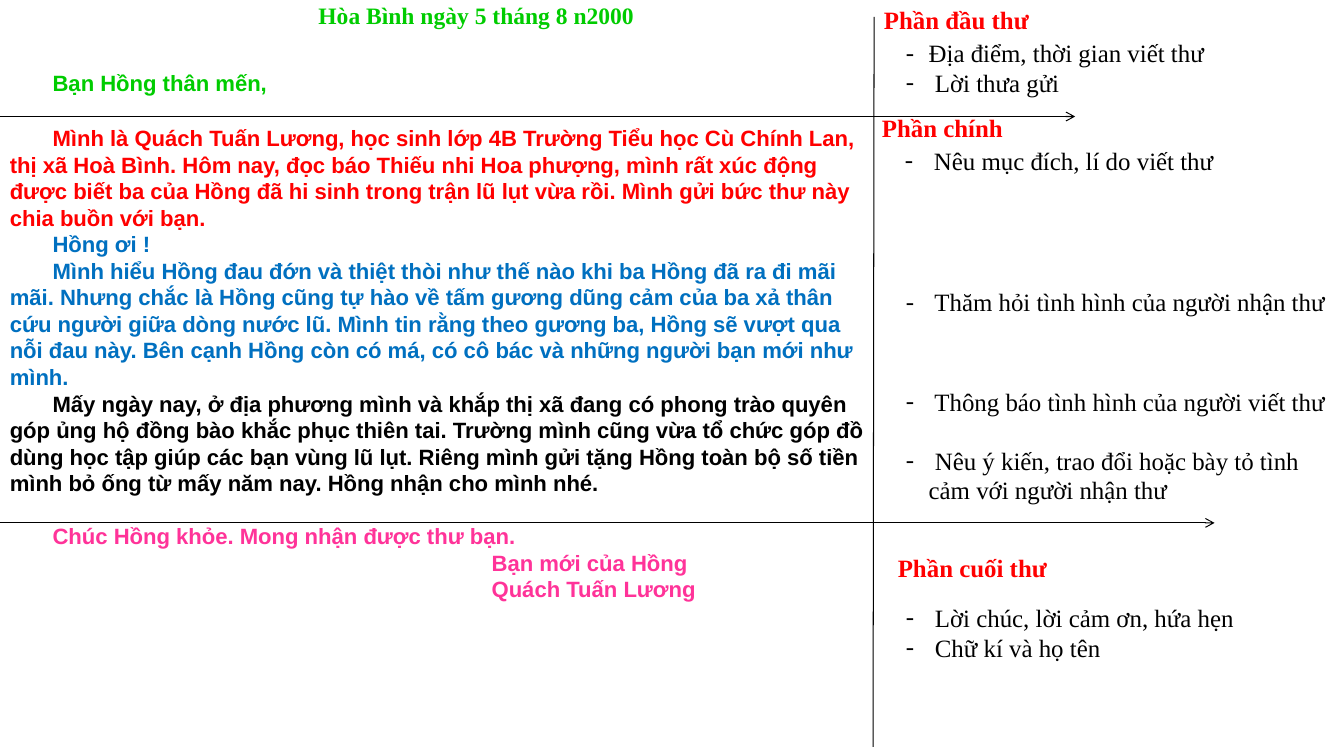
from dataclasses import dataclass

from lxml import etree
from pptx import Presentation
from pptx.dml.color import RGBColor
from pptx.enum.shapes import MSO_CONNECTOR
from pptx.oxml.ns import qn
from pptx.util import Inches, Pt

STRAIGHT = MSO_CONNECTOR.STRAIGHT


@dataclass(frozen=True)
class Theme:
    serif: str = "Times New Roman"
    sans: str = "Arial"
    green: str = "00CC00"
    red: str = "FF0000"
    blue: str = "0070C0"
    black: str = "000000"
    pink: str = "FF3399"
    date_size: float = 17
    letter_size: float = 16
    outline_size: float = 18
    letter_pitch: float = 19.2
    rule_width: float = 0.75


class LetterPage:
    def __init__(self, page, theme):
        self.page = page
        self.theme = theme

    def text_frame(self, left, top, width, height, wrap=True):
        box = self.page.shapes.add_textbox(
            Inches(left), Inches(top), Inches(width), Inches(height))
        box.text_frame.word_wrap = wrap
        return box.text_frame

    def add_text(self, frame, text, *, font, size, color, bold=False,
                 margin=0, indent=0, before=0, pitch=None, bullet=None):
        """Add one paragraph; margin and indent are inches, before and pitch points."""
        para = frame.paragraphs[0]
        if para.runs:
            para = frame.add_paragraph()
        para.space_before = Pt(before)
        if pitch:
            para.line_spacing = Pt(pitch)
        properties = para._p.get_or_add_pPr()
        properties.set("marL", str(Inches(margin)))
        properties.set("indent", str(Inches(indent)))
        if bullet:
            etree.SubElement(properties, qn("a:buFont")).set("typeface", font)
            etree.SubElement(properties, qn("a:buChar")).set("char", bullet)
        span = para.add_run()
        span.text = text
        span.font.name = font
        span.font.size = Pt(size)
        span.font.bold = bold
        span.font.color.rgb = RGBColor.from_string(color)

    def letter(self, paragraphs):
        frame = self.text_frame(0, -0.02, 8.89, 6.75)
        for text, style in paragraphs:
            self.add_text(frame, text, **{
                "font": self.theme.sans, "size": self.theme.letter_size,
                "bold": True, "indent": 0.43,
                "pitch": self.theme.letter_pitch, **style})

    def heading(self, text, left, top, width):
        frame = self.text_frame(left, top, width, 0.4, wrap=False)
        self.add_text(frame, text, font=self.theme.serif, bold=True,
                      size=self.theme.outline_size, color=self.theme.red)

    def dash_list(self, items, top, height, left=9, width=4.5):
        frame = self.text_frame(left, top, width, height)
        for item in items:
            self.add_text(frame, item, font=self.theme.serif, bullet="-",
                          size=self.theme.outline_size, color=self.theme.black,
                          margin=0.23, indent=-0.23)

    def rule(self, start, end, arrow=False):
        line = self.page.shapes.add_connector(
            STRAIGHT, *(Inches(value) for value in (*start, *end)))
        line.line.color.rgb = RGBColor.from_string(self.theme.black)
        line.line.width = Pt(self.theme.rule_width)
        properties = line._element.spPr
        if arrow:
            outline = properties.find(qn("a:ln"))
            etree.SubElement(outline, qn("a:tailEnd")).set("type", "arrow")
        etree.SubElement(properties, qn("a:effectLst"))


def main():
    deck = Presentation()
    deck.slide_width, deck.slide_height = Inches(13.5), Inches(7.5)
    theme = Theme()
    page = LetterPage(deck.slides.add_slide(deck.slide_layouts[6]), theme)

    signature = {"color": theme.pink, "margin": 4.84, "indent": 0}
    page.letter([
        ("Hòa Bình ngày 5 tháng 8 n2000",
         {"color": theme.green, "font": theme.serif,
          "size": theme.date_size, "indent": 3.1}),
        ("Bạn Hồng thân mến,", {"color": theme.green, "before": 29}),
        ("Mình là Quách Tuấn Lương, học sinh lớp 4B Trường Tiểu học Cù Chính "
         "Lan, thị xã Hoà Bình. Hôm nay, đọc báo Thiếu nhi Hoa phượng, mình "
         "rất xúc động được biết ba của Hồng đã hi sinh trong trận lũ lụt vừa "
         "rồi. Mình gửi bức thư này chia buồn với bạn.",
         {"color": theme.red, "before": 20.5}),
        ("Hồng ơi !", {"color": theme.blue}),
        ("Mình hiểu Hồng đau đớn và thiệt thòi như thế nào khi ba Hồng đã ra "
         "đi mãi mãi. Nhưng chắc là Hồng cũng tự hào về tấm gương dũng cảm "
         "của ba xả thân cứu người giữa dòng nước lũ. Mình tin rằng theo "
         "gương ba, Hồng sẽ vượt qua nỗi đau này. Bên cạnh Hồng còn có má, có "
         "cô bác và những người bạn mới như mình.", {"color": theme.blue}),
        ("Mấy ngày nay, ở địa phương mình và khắp thị xã đang có phong trào "
         "quyên góp ủng hộ đồng bào khắc phục thiên tai. Trường mình cũng vừa "
         "tổ chức góp đồ dùng học tập giúp các bạn vùng lũ lụt. Riêng mình "
         "gửi tặng Hồng toàn bộ số tiền mình bỏ ống từ mấy năm nay. Hồng nhận "
         "cho mình nhé.", {"color": theme.black}),
        ("Chúc Hồng khỏe. Mong nhận được thư bạn.",
         {"color": theme.pink, "before": theme.letter_pitch}),
        ("Bạn mới của Hồng", signature),
        ("Quách Tuấn Lương", signature),
    ])

    page.rule((8.78, 0.17), (8.77, 7.5))
    page.rule((0, 1.17), (10.8, 1.17), arrow=True)
    page.rule((0, 5.25), (12.2, 5.25), arrow=True)

    page.heading("Phần đầu thư", 8.78, 0, 1.67)
    page.heading("Phần chính", 8.76, 1.08, 1.43)
    page.heading("Phần cuối thư", 8.92, 5.5, 1.71)

    page.dash_list(["Địa điểm, thời gian viết thư", " Lời thưa gửi"], 0.33, 0.71)
    page.dash_list([" Nêu mục đích, lí do viết thư"], 1.41, 0.4, left=8.99)
    page.dash_list([" Thăm hỏi tình hình của người nhận thư"], 2.83, 0.4)
    page.dash_list([" Thông báo tình hình của người viết thư"], 3.83, 0.4)
    page.dash_list([" Nêu ý kiến, trao đổi hoặc bày tỏ tình cảm với người nhận thư"],
                   4.42, 0.71)
    page.dash_list([" Lời chúc, lời cảm ơn, hứa hẹn", " Chữ kí và họ tên"],
                   6, 0.71, width=4.72)

    deck.save("out.pptx")


if __name__ == "__main__":
    main()
